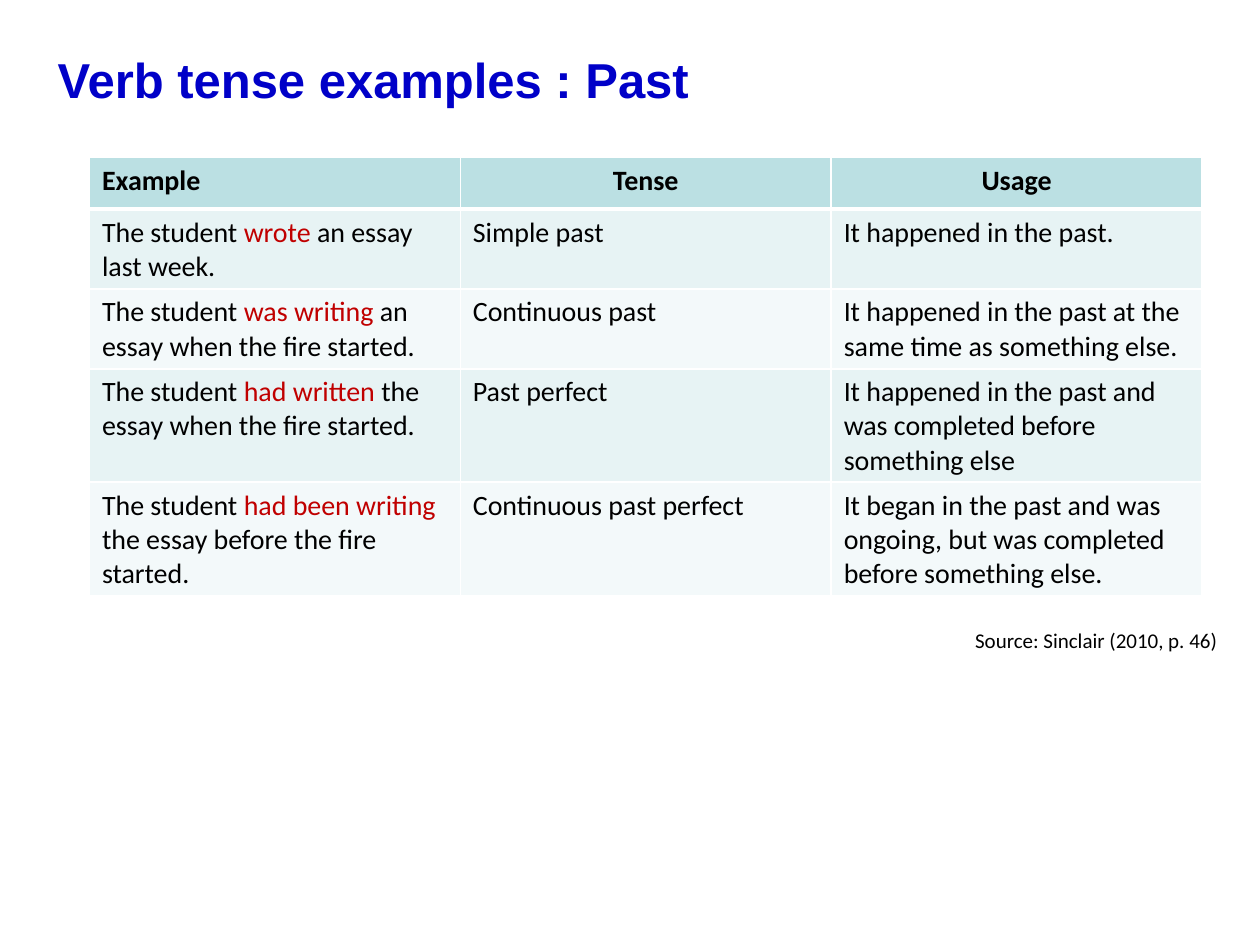
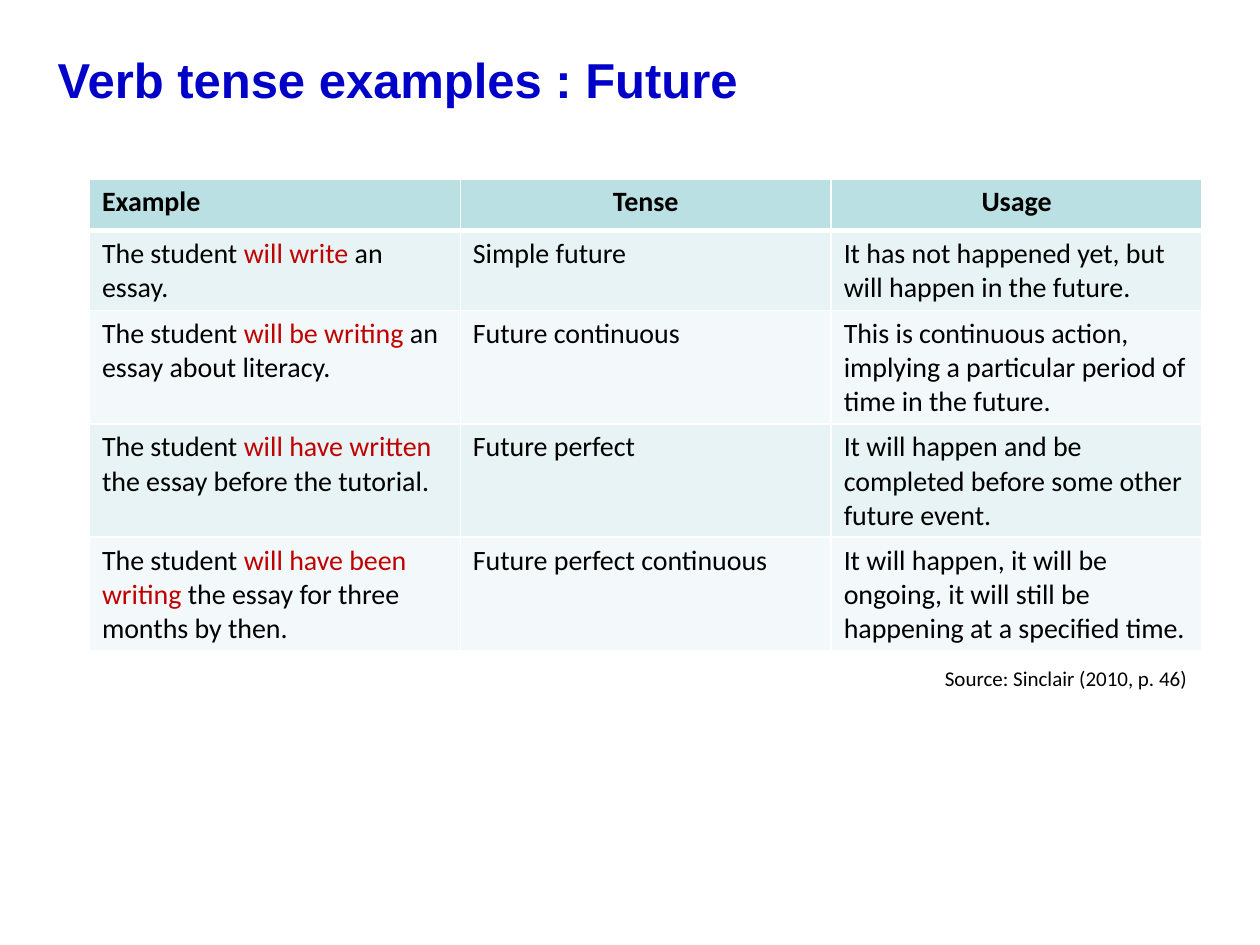
from lxml.etree import SubElement
from pptx import Presentation
from pptx.dml.color import RGBColor
from pptx.enum.text import PP_ALIGN
from pptx.oxml.ns import qn
from pptx.util import Inches, Pt

TITLE_BLUE = RGBColor(0x00, 0x00, 0xC8)
BLACK = RGBColor(0x00, 0x00, 0x00)
VERB_RED = RGBColor(0xC0, 0x00, 0x00)
WHITE = RGBColor(0xFF, 0xFF, 0xFF)
HEADER_FILL = RGBColor(0xBB, 0xE0, 0xE3)
BAND_FILLS = (RGBColor(0xE7, 0xF3, 0xF4), RGBColor(0xF3, 0xF9, 0xFA))

HEADINGS = ("Example", "Tense", "Usage")
SOURCE = "Source: Sinclair (2010, p. 46)"

PAST = [
    (("The student ", "wrote", " an essay last week."),
     "Simple past", "It happened in the past."),
    (("The student ", "was writing ", "an essay when the fire started."),
     "Continuous past",
     "It happened in the past at the same time as something else."),
    (("The student ", "had written ", "the essay when the fire started."),
     "Past perfect",
     "It happened in the past and was completed before something else"),
    (("The student ", "had been writing ", "the essay before the fire started."),
     "Continuous past perfect",
     "It began in the past and was ongoing, but was completed before something else."),
]

FUTURE = [
    (("The student ", "will write ", "an essay."),
     "Simple future",
     "It has not happened yet, but will happen in the future."),
    (("The student ", "will be writing ", "an essay about literacy."),
     "Future continuous",
     "This is continuous action, implying a particular period of time in the future."),
    (("The student ", "will have written ", "the essay before the tutorial."),
     "Future perfect",
     "It will happen and be completed before some other future event."),
    (("The student ", "will have been writing", " the essay for three months by then."),
     "Future perfect continuous",
     "It will happen, it will be ongoing, it will still be happening at a specified time."),
]


def write(para, text, size=16, font="Calibri", color=BLACK, bold=False,
          align=PP_ALIGN.LEFT):
    para.alignment = align
    span = para.add_run()
    span.text = text
    span.font.size = Pt(size)
    span.font.name = font
    span.font.bold = bold
    span.font.color.rgb = color


def add_text(page, box, text, margin_top=0.05, **style):
    frame = page.shapes.add_textbox(*map(Inches, box)).text_frame
    frame.word_wrap = True
    frame.margin_top = Inches(margin_top)
    write(frame.paragraphs[0], text, **style)


def set_borders(cell, top=1, bottom=1):
    properties = cell._tc.get_or_add_tcPr()
    for side, width in (("L", 1), ("R", 1), ("T", top), ("B", bottom)):
        line = SubElement(properties, qn(f"a:ln{side}"), w=str(Pt(width)))
        fill = SubElement(line, qn("a:solidFill"))
        SubElement(fill, qn("a:srgbClr"), val=str(WHITE))


def fill_cell(cell, color, **borders):
    set_borders(cell, **borders)
    cell.fill.solid()
    cell.fill.fore_color.rgb = color


def add_tense_table(page, box, examples):
    left, top, width, row_height = box
    rows, columns = len(examples) + 1, len(HEADINGS)
    table = page.shapes.add_table(
        rows, columns, Inches(left), Inches(top),
        Inches(width), Inches(row_height * rows)).table
    for column, heading in enumerate(HEADINGS):
        cell = table.cell(0, column)
        fill_cell(cell, HEADER_FILL, bottom=3)
        write(cell.text_frame.paragraphs[0], heading, bold=True,
              align=PP_ALIGN.CENTER if column else PP_ALIGN.LEFT)
    for row, (sentence, *details) in enumerate(examples, 1):
        for column in range(columns):
            cell = table.cell(row, column)
            fill_cell(cell, BAND_FILLS[(row - 1) % 2], top=3 if row == 1 else 1)
            para = cell.text_frame.paragraphs[0]
            if column:
                write(para, details[column - 1])
            else:
                for text, color in zip(sentence, (BLACK, VERB_RED, BLACK)):
                    write(para, text, color=color)


def add_tense_page(deck, period, examples, table_top, source_left, source_top):
    page = deck.slides.add_slide(deck.slide_layouts[6])
    add_text(page, (0.36, 0.29, 9.11, 0.73), f"Verb tense examples : {period}",
             margin_top=0.1, size=28, font="Arial", color=TITLE_BLUE, bold=True)
    add_tense_table(page, (0.71, table_top, 8.83, 0.41), examples)
    add_text(page, (source_left, source_top, 4.84, 0.3), SOURCE,
             size=12, align=PP_ALIGN.RIGHT)


def main():
    deck = Presentation()
    deck.slide_width, deck.slide_height = Inches(10), Inches(7.5)
    add_tense_page(deck, "Past", PAST, 1.25, 4.92, 4.93)
    add_tense_page(deck, "Future", FUTURE, 1.42, 4.68, 5.23)
    deck.save("out.pptx")


if __name__ == "__main__":
    main()
